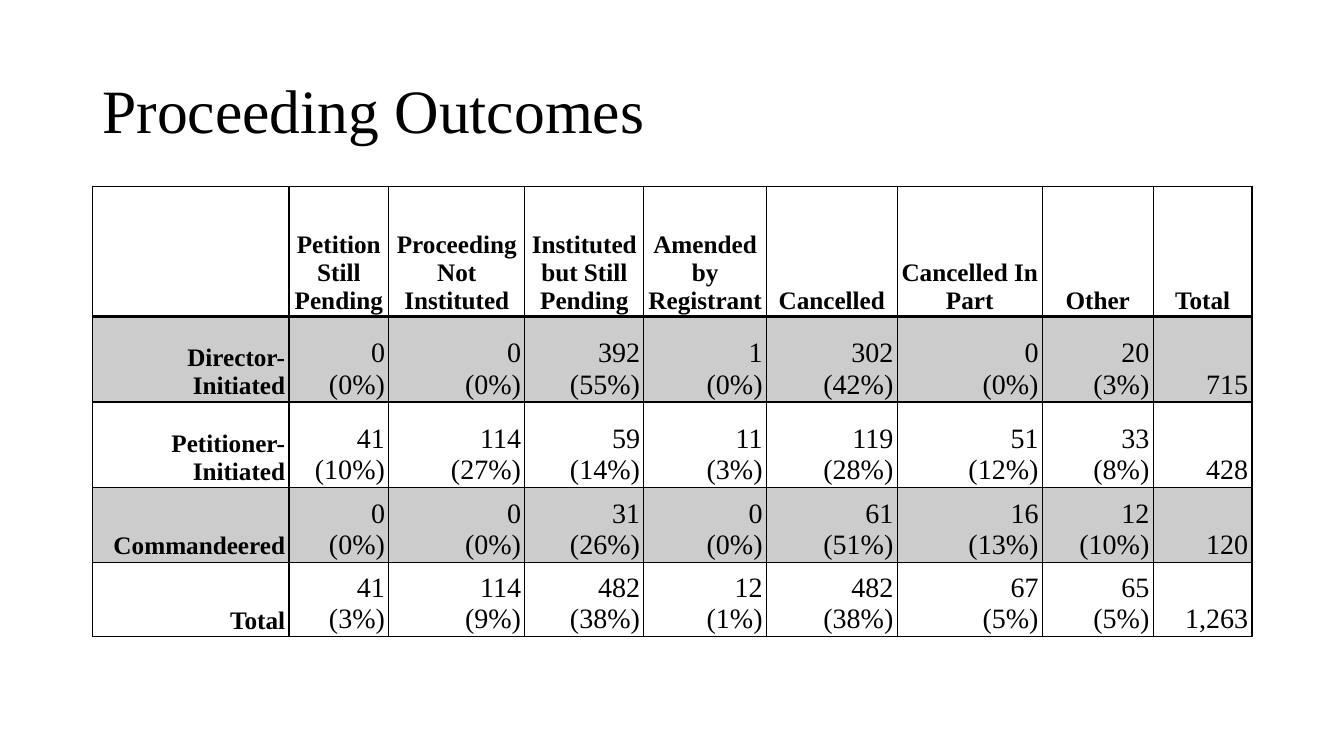
from dataclasses import dataclass

from lxml import etree
from pptx import Presentation
from pptx.dml.color import RGBColor
from pptx.enum.text import MSO_ANCHOR, PP_ALIGN
from pptx.oxml.ns import qn
from pptx.slide import Slide
from pptx.table import _Cell
from pptx.text.text import TextFrame
from pptx.util import Pt

CENTER, LEFT, RIGHT = PP_ALIGN.CENTER, PP_ALIGN.LEFT, PP_ALIGN.RIGHT
BOTTOM, MIDDLE = MSO_ANCHOR.BOTTOM, MSO_ANCHOR.MIDDLE

BLACK = RGBColor(0x00, 0x00, 0x00)
WHITE = RGBColor(0xFF, 0xFF, 0xFF)
GRAY = RGBColor(0xCC, 0xCC, 0xCC)
FONT = "Times New Roman"

SLIDE_WIDTH, SLIDE_HEIGHT = 960, 540
MARGIN = 66
TABLE_TOP = 133
COLUMN_WIDTHS = (140.4, 71.3, 97.2, 85, 87.6, 93.4, 103.7, 79.2, 70.6)
ROW_HEIGHTS = (93, 61.2, 61.2, 53.2, 53.2)
THIN, THICK = 1, 2

HEADERS = (
    "", "Petition Still Pending", "Proceeding Not Instituted",
    "Instituted but Still Pending", "Amended by Registrant", "Cancelled",
    "Cancelled In Part", "Other", "Total",
)


@dataclass(frozen=True)
class OutcomeRow:
    label: str
    counts: tuple[int, ...]
    percents: tuple[int, ...]
    total: int

    def texts(self) -> list[str]:
        outcomes = [f"{count}\n({percent}%)" for count, percent in zip(self.counts, self.percents)]
        return [self.label, *outcomes, f"{self.total:,}"]


OUTCOMES = (
    OutcomeRow("Director-Initiated", (0, 0, 392, 1, 302, 0, 20), (0, 0, 55, 0, 42, 0, 3), 715),
    OutcomeRow("Petitioner-Initiated", (41, 114, 59, 11, 119, 51, 33), (10, 27, 14, 3, 28, 12, 8), 428),
    OutcomeRow("Commandeered", (0, 0, 31, 0, 61, 16, 12), (0, 0, 26, 0, 51, 13, 10), 120),
    OutcomeRow("Total", (41, 114, 482, 12, 482, 67, 65), (3, 9, 38, 1, 38, 5, 5), 1263),
)


def set_text(frame: TextFrame, text: str, size: float, bold: bool, alignment: PP_ALIGN) -> None:
    frame.text = text
    for paragraph in frame.paragraphs:
        paragraph.alignment = alignment
        paragraph.font.size = Pt(size)
        for run in paragraph.runs:
            run.font.name = FONT
            run.font.size = Pt(size)
            run.font.bold = bold
            run.font.color.rgb = BLACK


def set_borders(cell: _Cell, top: float, bottom: float) -> None:
    properties = cell._tc.get_or_add_tcPr()
    for side, width in (("L", THIN), ("R", THIN), ("T", top), ("B", bottom)):
        line = etree.SubElement(properties, qn(f"a:ln{side}"), w=str(Pt(width)))
        fill = etree.SubElement(line, qn("a:solidFill"))
        etree.SubElement(fill, qn("a:srgbClr"), val=str(BLACK))


def add_title(slide: Slide, text: str) -> None:
    box = slide.shapes.add_textbox(Pt(MARGIN), Pt(28.8), Pt(828), Pt(104.4))
    frame = box.text_frame
    frame.word_wrap = True
    frame.vertical_anchor = MIDDLE
    set_text(frame, text, 44, False, LEFT)
    frame.paragraphs[0].line_spacing = 0.9


def add_outcome_table(slide: Slide) -> None:
    rows = [HEADERS, *(outcome.texts() for outcome in OUTCOMES)]
    table = slide.shapes.add_table(
        len(rows), len(HEADERS), Pt(MARGIN), Pt(TABLE_TOP),
        Pt(sum(COLUMN_WIDTHS)), Pt(sum(ROW_HEIGHTS)),
    ).table
    table.first_row = False
    table.horz_banding = False
    for column, width in zip(table.columns, COLUMN_WIDTHS):
        column.width = Pt(width)
    for row, height in zip(table.rows, ROW_HEIGHTS):
        row.height = Pt(height)

    for row_index, texts in enumerate(rows):
        is_header = row_index == 0
        for column_index, text in enumerate(texts):
            cell = table.cell(row_index, column_index)
            is_heading = is_header or column_index == 0
            cell.vertical_anchor = BOTTOM
            cell.margin_left = cell.margin_right = Pt(2.7)
            cell.margin_top = cell.margin_bottom = Pt(1.4)
            set_text(cell.text_frame, text, 18 if is_heading else 20, is_heading,
                     CENTER if is_header else RIGHT)
            set_borders(cell, THICK if row_index == 1 else THIN, THICK if is_header else THIN)
            cell.fill.solid()
            cell.fill.fore_color.rgb = GRAY if row_index % 2 else WHITE


def main() -> None:
    presentation = Presentation()
    presentation.slide_width = Pt(SLIDE_WIDTH)
    presentation.slide_height = Pt(SLIDE_HEIGHT)
    slide = presentation.slides.add_slide(presentation.slide_layouts[6])
    add_title(slide, "Proceeding Outcomes")
    add_outcome_table(slide)
    presentation.save("out.pptx")


if __name__ == "__main__":
    main()
